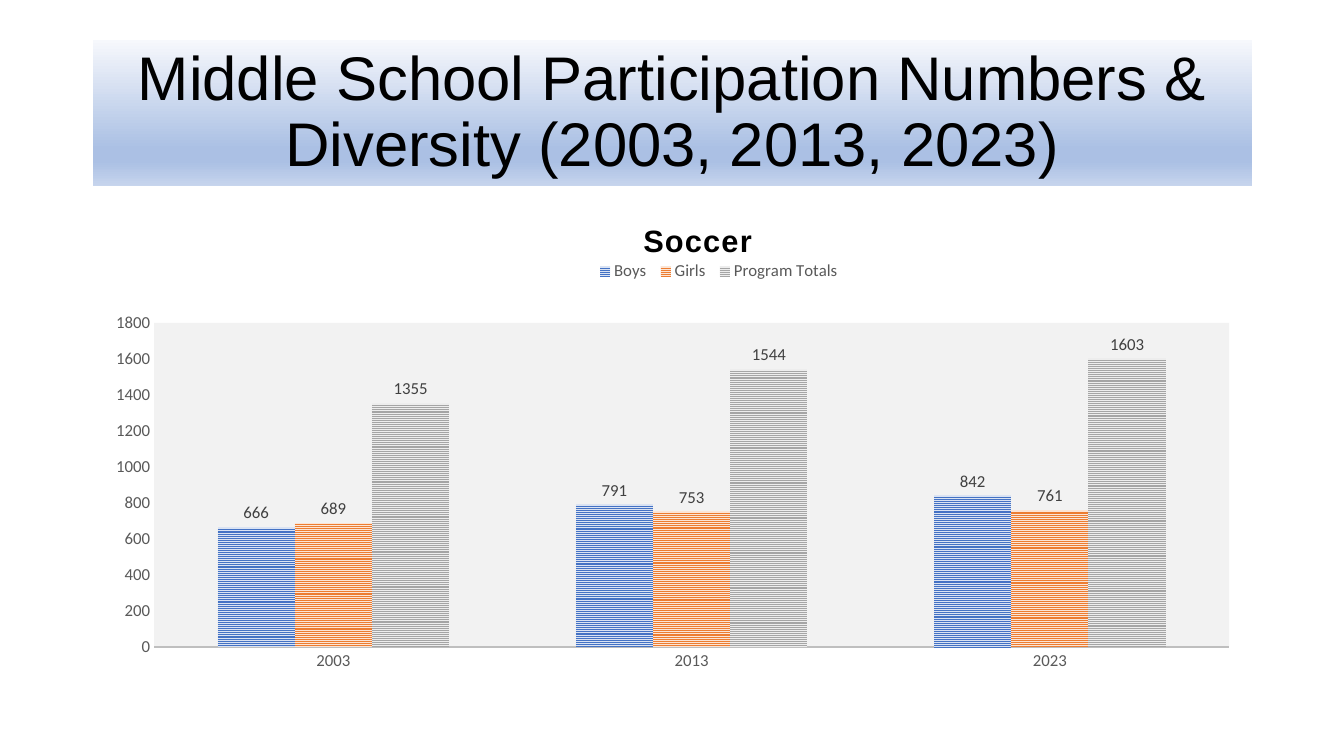
from lxml import etree
from pptx import Presentation
from pptx.chart.data import CategoryChartData
from pptx.dml.color import RGBColor
from pptx.enum.chart import XL_CHART_TYPE as ChartType
from pptx.enum.chart import XL_LABEL_POSITION as LabelPosition
from pptx.enum.chart import XL_LEGEND_POSITION as LegendPosition
from pptx.enum.chart import XL_TICK_MARK as TickMark
from pptx.enum.dml import MSO_PATTERN as Pattern
from pptx.enum.shapes import MSO_SHAPE as Shape
from pptx.enum.text import MSO_ANCHOR as Anchor
from pptx.enum.text import PP_ALIGN as Align
from pptx.oxml.ns import qn
from pptx.util import Inches, Pt

WIDTH, HEIGHT = Inches(13.33), Inches(7.5)
MARGIN, CONTENT_WIDTH = Inches(0.92), Inches(11.5)

COLORS = {
    "text": "000000",
    "axis_text": "595959",
    "label_text": "404040",
    "axis_line": "BFBFBF",
    "plot": "F2F2F2",
}
BANNER_STOPS = [(0, "F6F8FC"), (74, "ABC0E4"), (83, "ABC0E4"), (100, "C7D5ED")]
YEARS = ["2003", "2013", "2023"]
# Group name, participants per year, stripe colour, gap colour
GROUPS = [
    ("Boys", (666, 791, 842), "4472C4", "DAE3F3"),
    ("Girls", (689, 753, 761), "ED7D31", "FBE5D6"),
    ("Program Totals", (1355, 1544, 1603), "A5A5A5", "EDEDED"),
]


def rgb(value):
    return RGBColor.from_string(value)


def style_font(font, size, color, name="Calibri"):
    font.size = Pt(size)
    font.name = name
    font.color.rgb = rgb(color)


def fill_gradient(fill, stops):
    """Fill from top to bottom with (percent, colour) stops."""
    fill.gradient()
    fill.gradient_angle = 270
    stop_list = fill._xPr.find(qn("a:gradFill")).find(qn("a:gsLst"))
    for stop in list(stop_list):
        stop_list.remove(stop)
    for percent, color in stops:
        stop = etree.SubElement(stop_list, qn("a:gs"), pos=str(percent * 1000))
        etree.SubElement(stop, qn("a:srgbClr"), val=color)


def place(part, index, inner=False, **shares):
    """Lay out a chart part by shares of the chart's size."""
    for old in part.findall(qn("c:layout")):
        part.remove(old)
    layout = etree.Element(qn("c:layout"))
    manual = etree.SubElement(layout, qn("c:manualLayout"))
    if inner:
        etree.SubElement(manual, qn("c:layoutTarget"), val="inner")
    for side in "xy":
        etree.SubElement(manual, qn(f"c:{side}Mode"), val="edge")
    for key, share in shares.items():
        etree.SubElement(manual, qn(f"c:{key}"), val=str(share))
    part.insert(index, layout)


def add_banner(slide, text):
    banner = slide.shapes.add_shape(
        Shape.RECTANGLE, MARGIN, Inches(0.4), CONTENT_WIDTH, Inches(1.45))
    banner.shadow.inherit = False
    fill_gradient(banner.fill, BANNER_STOPS)
    banner.line.fill.background()
    frame = banner.text_frame
    frame.word_wrap = True
    frame.vertical_anchor = Anchor.MIDDLE
    frame.text = text
    heading = frame.paragraphs[0]
    heading.alignment = Align.CENTER
    heading.line_spacing = 0.9
    style_font(heading.runs[0].font, 44, COLORS["text"], "Arial")


def add_chart_title(chart, text):
    chart.has_title = True
    title = chart.chart_title
    title.text_frame.text = text
    run = title.text_frame.paragraphs[0].runs[0]
    style_font(run.font, 22, COLORS["text"], "Arial")
    run.font.bold = True
    run.font._element.set("spc", "100")
    place(title._element, 1, x=0.47, y=0.03)


def add_legend(chart):
    chart.has_legend = True
    legend = chart.legend
    legend.position = LegendPosition.TOP
    legend.include_in_layout = False
    style_font(legend.font, 12, COLORS["axis_text"])
    place(legend._element, 1, x=0.43, y=0.12, w=0.22, h=0.05)


def style_axes(chart):
    for axis in (chart.category_axis, chart.value_axis):
        axis.has_major_gridlines = False
        axis.major_tick_mark = axis.minor_tick_mark = TickMark.NONE
        style_font(axis.tick_labels.font, 12, COLORS["axis_text"])
    year_line = chart.category_axis.format.line
    year_line.color.rgb = rgb(COLORS["axis_line"])
    year_line.width = Pt(1.5)
    counts = chart.value_axis
    counts.format.line.fill.background()
    counts.minimum_scale, counts.maximum_scale, counts.major_unit = 0, 1800, 200


def style_group(bars, stripe, gap):
    fill = bars.format.fill
    fill.patterned()
    fill.pattern = Pattern.NARROW_HORIZONTAL
    fill.fore_color.rgb = rgb(stripe)
    fill.back_color.rgb = rgb(gap)
    bars.format.line.fill.background()
    labels = bars.data_labels
    labels.show_value = True
    labels.position = LabelPosition.OUTSIDE_END
    style_font(labels.font, 12, COLORS["label_text"])


def style_plot_area(chart):
    area = chart._chartSpace.chart.plotArea
    place(area, 0, inner=True, x=0.053, y=0.253, w=0.927, h=0.675)
    properties = etree.SubElement(area, qn("c:spPr"))
    fill = etree.SubElement(properties, qn("a:solidFill"))
    etree.SubElement(fill, qn("a:srgbClr"), val=COLORS["plot"])


def add_participation_chart(slide, title):
    data = CategoryChartData()
    data.categories = YEARS
    for name, counts, *_ in GROUPS:
        data.add_series(name, counts)
    chart = slide.shapes.add_chart(
        ChartType.COLUMN_CLUSTERED, MARGIN, Inches(2), CONTENT_WIDTH,
        Inches(4.76), data).chart
    style_font(chart.font, 10, COLORS["text"])
    add_chart_title(chart, title)
    add_legend(chart)
    style_axes(chart)
    plot = chart.plots[0]
    plot.gap_width = 164
    plot.overlap = 0
    plot.vary_by_categories = False
    for bars, (_, _, stripe, gap) in zip(plot.series, GROUPS):
        style_group(bars, stripe, gap)
    style_plot_area(chart)


def main():
    deck = Presentation()
    deck.slide_width, deck.slide_height = WIDTH, HEIGHT
    slide = deck.slides.add_slide(deck.slide_layouts[6])
    add_banner(slide, "Middle School Participation Numbers & Diversity (2003, 2013, 2023)")
    add_participation_chart(slide, "Soccer")
    deck.save("out.pptx")


if __name__ == "__main__":
    main()
